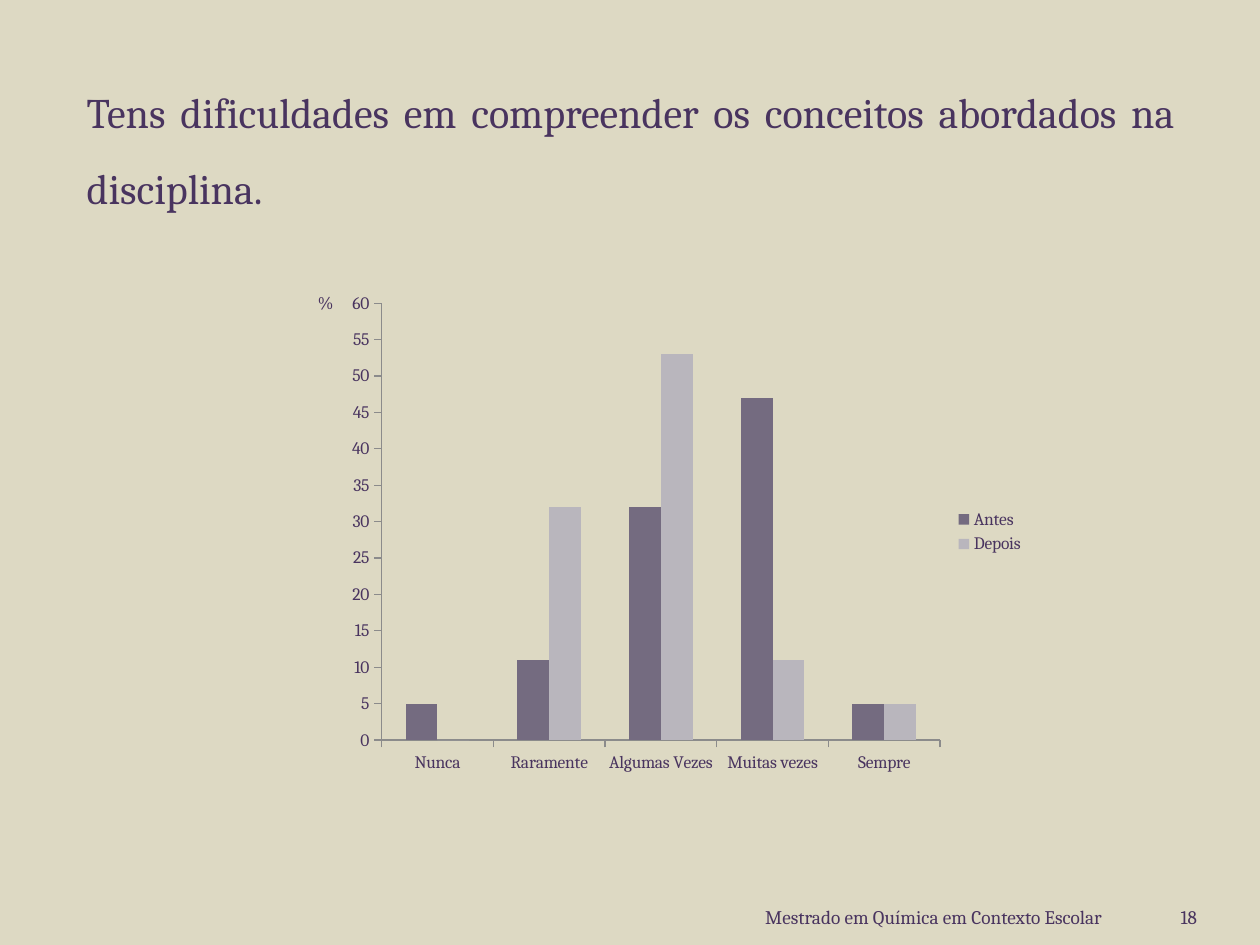
from lxml import etree
from pptx import Presentation
from pptx.chart.data import CategoryChartData
from pptx.dml.color import RGBColor
from pptx.enum.chart import XL_CHART_TYPE, XL_LEGEND_POSITION, XL_TICK_MARK
from pptx.enum.text import MSO_ANCHOR, PP_ALIGN
from pptx.oxml.ns import qn
from pptx.util import Inches, Pt

COLUMN = XL_CHART_TYPE.COLUMN_CLUSTERED
OUTSIDE = XL_TICK_MARK.OUTSIDE
NO_TICK = XL_TICK_MARK.NONE
LEGEND_RIGHT = XL_LEGEND_POSITION.RIGHT
MIDDLE, TOP = MSO_ANCHOR.MIDDLE, MSO_ANCHOR.TOP
RIGHT, JUSTIFY = PP_ALIGN.RIGHT, PP_ALIGN.JUSTIFY

SAND = RGBColor(0xDD, 0xD9, 0xC3)
PLUM = RGBColor(0x49, 0x34, 0x5F)
GRAY = RGBColor(0x8B, 0x8B, 0x8B)
DARK = RGBColor(0x74, 0x6B, 0x80)
PALE = RGBColor(0xB9, 0xB6, 0xBD)
FONT = "Cambria"

ANSWERS = ["Nunca", "Raramente", "Algumas Vezes", "Muitas vezes", "Sempre"]
SERIES = [
    ("Antes", [5, 11, 32, 47, 5], DARK),
    ("Depois", [0, 32, 53, 11, 5], PALE),
]


def set_font(font, size, bold=False):
    font.name = FONT
    font.size = Pt(size)
    font.bold = bold
    font.color.rgb = PLUM


def add_text(slide, text, box, size, align, anchor):
    shape = slide.shapes.add_textbox(*map(Inches, box))
    frame = shape.text_frame
    frame.word_wrap = True
    frame.vertical_anchor = anchor
    para = frame.paragraphs[0]
    para.alignment = align
    run = para.add_run()
    run.text = text
    set_font(run.font, size)
    return frame


def add_title(slide, text):
    frame = add_text(slide, text, (0.59, 0.44, 8.83, 6.54), 24, JUSTIFY, TOP)
    para = frame.paragraphs[0]
    para.line_spacing = 1.5
    para.space_before = Pt(15)


def add_footer(slide, text, left, width):
    frame = add_text(slide, text, (left, 7.15, width, 0.25), 11, RIGHT, MIDDLE)
    frame.margin_right = 0


def set_layout(parent, **places):
    layout = parent.find(qn("c:layout"))
    if layout is None:
        layout = etree.Element(qn("c:layout"))
        parent.insert(0, layout)
    manual = etree.SubElement(layout, qn("c:manualLayout"))
    for name, value in places.items():
        etree.SubElement(manual, qn("c:" + name), val=str(value))


def style_axis(axis):
    axis.has_major_gridlines = False
    axis.major_tick_mark = OUTSIDE
    axis.minor_tick_mark = NO_TICK
    axis.format.line.color.rgb = GRAY
    axis.format.line.width = Pt(0.75)
    set_font(axis.tick_labels.font, 10)


def label_axis(axis, text):
    title = axis.axis_title
    run = title.text_frame.paragraphs[0].add_run()
    run.text = text
    set_font(run.font, 10)
    body = title.element.xpath(".//a:bodyPr")[0]
    body.set("rot", "0")
    body.set("vert", "horz")
    set_layout(title.element, xMode="edge", yMode="edge", x=0.03, y=0.01)


def add_chart(slide):
    data = CategoryChartData()
    data.categories = ANSWERS
    for name, values, color in SERIES:
        data.add_series(name, values)
    box = map(Inches, (2.32, 2.25, 5.91, 3.94))
    chart = slide.shapes.add_chart(COLUMN, *box, data).chart
    set_font(chart.font, 10)
    chart.has_title = False
    chart.has_legend = True
    chart.legend.position = LEGEND_RIGHT
    chart.legend.include_in_layout = False
    set_font(chart.legend.font, 10)

    plot = chart.plots[0]
    plot.vary_by_categories = False
    plot.gap_width = 150
    plot.overlap = 0
    for series, (name, values, color) in zip(plot.series, SERIES):
        series.format.fill.solid()
        series.format.fill.fore_color.rgb = color

    style_axis(chart.category_axis)
    axis = chart.value_axis
    style_axis(axis)
    axis.minimum_scale = 0
    axis.maximum_scale = 60
    axis.major_unit = 5
    label_axis(axis, "%")
    area = chart.element.xpath("c:chart/c:plotArea")[0]
    set_layout(area, layoutTarget="inner", xMode="edge", yMode="edge",
               x=0.12, y=0.04, w=0.75, h=0.88)


def main():
    deck = Presentation()
    deck.slide_width = Inches(10)
    deck.slide_height = Inches(7.5)
    slide = deck.slides.add_slide(deck.slide_layouts[6])
    fill = slide.background.fill
    fill.solid()
    fill.fore_color.rgb = SAND
    add_footer(slide, "Mestrado em Química em Contexto Escolar", 4.75, 4)
    add_footer(slide, "18", 8.83, 0.67)
    add_title(slide, "Tens dificuldades em compreender os conceitos "
                     "abordados na disciplina.")
    add_chart(slide)
    deck.save("out.pptx")


if __name__ == "__main__":
    main()
